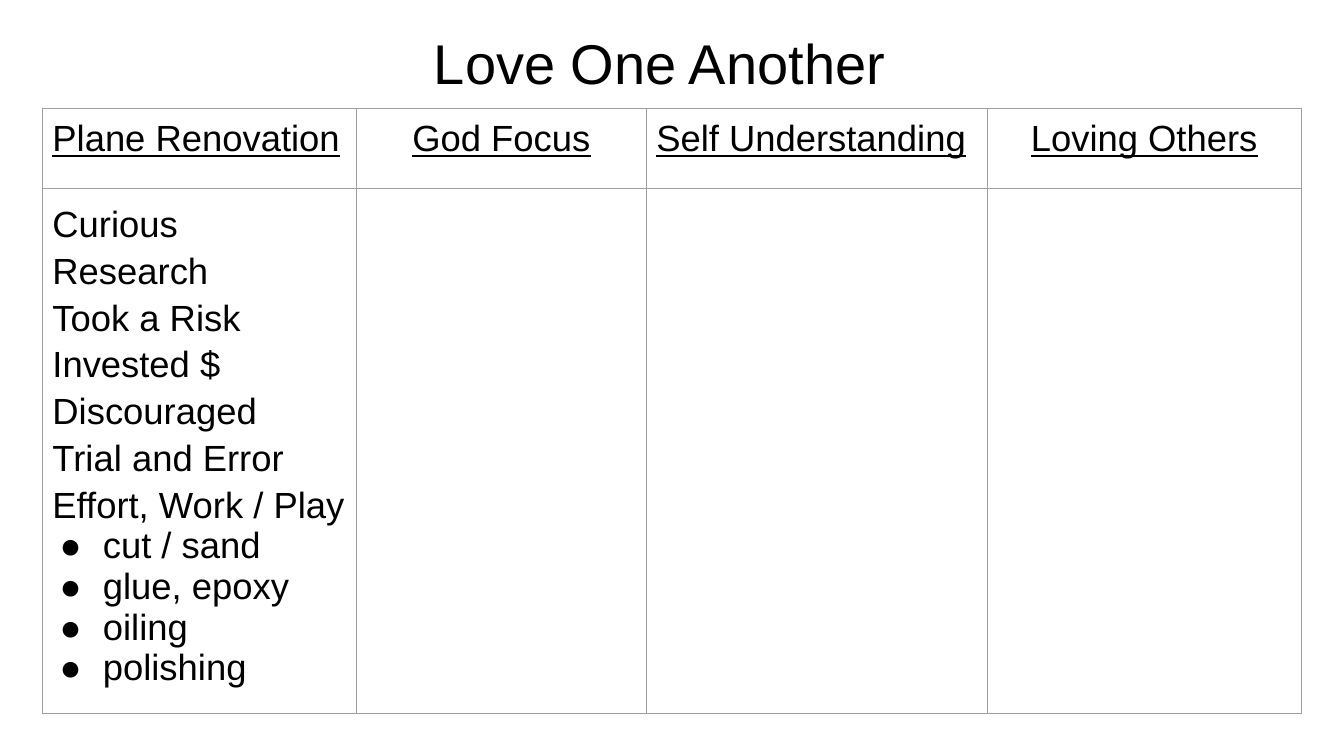
from lxml import etree
from pptx import Presentation
from pptx.dml.color import RGBColor
from pptx.enum import text
from pptx.oxml import ns
from pptx.util import Inches, Pt

FONT = "Arial"
BLACK, WHITE, GREY = "000000", "FFFFFF", "9E9E9E"
COLUMN_WIDTHS = [3.12, 2.87, 3.38, 3.12]
ROW_HEIGHTS = [0.79, 5.21]
HEADINGS = [
    ("Plane Renovation", text.PP_ALIGN.LEFT),
    ("God Focus", text.PP_ALIGN.CENTER),
    ("Self Understanding", text.PP_ALIGN.LEFT),
    ("Loving Others", text.PP_ALIGN.CENTER),
]
STAGES = ["Curious", "Research", "Took a Risk", "Invested $",
          "Discouraged", "Trial and Error", "Effort, Work / Play"]
TASKS = ["cut / sand", "glue, epoxy", "oiling", "polishing"]


def color(value):
    return RGBColor.from_string(value)


def add_element(parent, tag, **attributes):
    return etree.SubElement(parent, ns.qn(tag), attributes)


def style_runs(para, size, underline=False):
    for span in para.runs:
        span.font.name = FONT
        span.font.size = Pt(size)
        span.font.underline = underline
        span.font.color.rgb = color(BLACK)


def add_bullet(para):
    properties = para._p.get_or_add_pPr()
    properties.set("marL", str(Inches(0.5)))
    properties.set("indent", str(Inches(-0.43)))
    bullet_color = add_element(properties, "a:buClr")
    add_element(bullet_color, "a:srgbClr", val=BLACK)
    add_element(properties, "a:buFont", typeface=FONT)
    add_element(properties, "a:buChar", char="●")


def style_cell(cell):
    properties = cell._tc.get_or_add_tcPr()
    for side in ("a:lnL", "a:lnR", "a:lnT", "a:lnB"):
        line = add_element(properties, side, w=str(Pt(0.75)))
        fill = add_element(line, "a:solidFill")
        add_element(fill, "a:srgbClr", val=GREY)
    cell.fill.solid()
    cell.fill.fore_color.rgb = color(WHITE)
    cell.margin_left = cell.margin_right = Inches(0.1)
    cell.margin_top = cell.margin_bottom = Inches(0.1)


def place_title(page, left, top, width, height):
    title = page.shapes.title
    title.left, title.top = Inches(left), Inches(top)
    title.width, title.height = Inches(width), Inches(height)
    frame = title.text_frame
    frame.text = "Love One Another"
    frame.word_wrap = True
    frame.vertical_anchor = text.MSO_ANCHOR.MIDDLE
    para = frame.paragraphs[0]
    para.alignment = text.PP_ALIGN.CENTER
    para.line_spacing = 0.93
    style_runs(para, 40)


def fill_renovation(cell):
    cell.text_frame.text = "\n".join(STAGES + TASKS)
    for index, para in enumerate(cell.text_frame.paragraphs):
        if index < len(STAGES):
            para.line_spacing = 1.15
        else:
            add_bullet(para)
        style_runs(para, 26)


def add_comparison(page, left, top, width, height):
    table = page.shapes.add_table(
        len(ROW_HEIGHTS), len(COLUMN_WIDTHS),
        Inches(left), Inches(top), Inches(width), Inches(height)).table
    table.first_row = table.horz_banding = False
    for column, share in zip(table.columns, COLUMN_WIDTHS):
        column.width = Inches(width * share / sum(COLUMN_WIDTHS))
    for row, share in zip(table.rows, ROW_HEIGHTS):
        row.height = Inches(height * share / sum(ROW_HEIGHTS))
    for cell in table.iter_cells():
        style_cell(cell)
    for index, (heading, alignment) in enumerate(HEADINGS):
        frame = table.cell(0, index).text_frame
        frame.text = heading
        frame.paragraphs[0].alignment = alignment
        style_runs(frame.paragraphs[0], 26, underline=True)
    fill_renovation(table.cell(1, 0))


def main():
    deck = Presentation()
    deck.slide_width, deck.slide_height = Inches(13.33), Inches(7.5)
    page = deck.slides.add_slide(deck.slide_layouts.get_by_name("Title Only"))
    page.background.fill.solid()
    page.background.fill.fore_color.rgb = color(WHITE)
    place_title(page, 0.79, 0.16, 11.5, 0.99)
    add_comparison(page, 0.42, 1.08, sum(COLUMN_WIDTHS), sum(ROW_HEIGHTS))
    deck.save("out.pptx")


if __name__ == "__main__":
    main()
